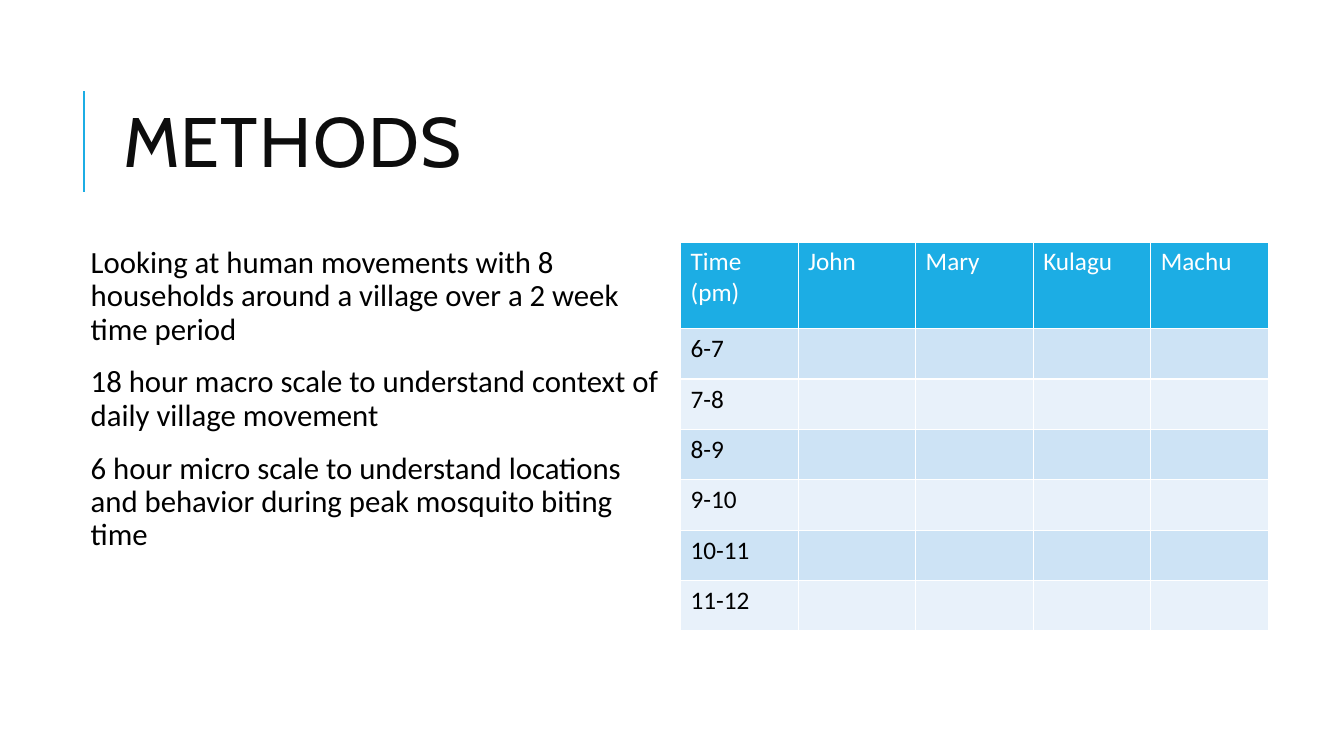
import pptx
import pptx.dml.color
import pptx.enum.shapes
import pptx.enum.text
import pptx.oxml.ns
import pptx.util
from lxml import etree

Inches = pptx.util.Inches
Pt = pptx.util.Pt
RGBColor = pptx.dml.color.RGBColor
qn = pptx.oxml.ns.qn

ACCENT = RGBColor(0x1C, 0xAD, 0xE4)
TITLE_INK = RGBColor(0x0D, 0x0D, 0x0D)
BLACK = RGBColor(0, 0, 0)
WHITE = RGBColor(0xFF, 0xFF, 0xFF)
BANDS = (RGBColor(0xCD, 0xE3, 0xF5), RGBColor(0xE8, 0xF1, 0xFA))

# Two equal columns below the title
COLUMN_WIDTH = 5.83
CONTENT_TOP = 2.4
LEFT_COLUMN = 0.75
RIGHT_COLUMN = 6.75

METHODS = (
    "Looking at human movements with 8 households around a village over a 2 week time period",
    "18 hour macro scale to understand context of daily village movement",
    "6 hour micro scale to understand locations and behavior during peak mosquito biting time",
)
PEOPLE = ("John", "Mary", "Kulagu", "Machu")
FIRST_HOUR, LAST_HOUR = 6, 12


def place(shape, box):
    shape.left, shape.top, shape.width, shape.height = (Inches(length) for length in box)


def add_run(paragraph, text, size, color, font="Calibri"):
    run = paragraph.add_run()
    run.text = text
    run.font.name = font
    run.font.size = Pt(size)
    run.font.color.rgb = color
    run.font.bold = False
    return run


def set_space_bullet(paragraph):
    """Hang the first line on a blank bullet in the accent colour."""
    properties = paragraph._p.get_or_add_pPr()
    properties.set("marL", str(Inches(0.1)))
    properties.set("indent", str(-Inches(0.1)))
    bullet_color = etree.SubElement(properties, qn("a:buClr"))
    etree.SubElement(bullet_color, qn("a:srgbClr"), val=str(ACCENT))
    etree.SubElement(properties, qn("a:buChar"), char=" ")


def build_title(slide, box):
    left, top, width, height = box
    title = slide.shapes.title
    place(title, box)
    frame = title.text_frame
    frame.auto_size = pptx.enum.text.MSO_AUTO_SIZE.NONE
    frame.vertical_anchor = pptx.enum.text.MSO_ANCHOR.MIDDLE
    paragraph = frame.paragraphs[0]
    paragraph.alignment = pptx.enum.text.PP_ALIGN.LEFT
    paragraph.line_spacing = 0.8
    run = add_run(paragraph, "METHODS", 50, TITLE_INK, "Cabin")
    run.font._element.set("spc", "100")

    rule_x = Inches(left - 0.29)
    rule = slide.shapes.add_connector(
        pptx.enum.shapes.MSO_CONNECTOR.STRAIGHT,
        rule_x, Inches(top + 1.26), rule_x, Inches(top + 0.26))
    rule.line.color.rgb = ACCENT
    rule.line.width = Pt(1.5)
    etree.SubElement(rule._element.spPr, qn("a:effectLst"))


def build_methods_list(slide, box):
    body = slide.placeholders[1]
    place(body, box)
    frame = body.text_frame
    frame.auto_size = pptx.enum.text.MSO_AUTO_SIZE.NONE
    frame.vertical_anchor = pptx.enum.text.MSO_ANCHOR.TOP
    frame.margin_left = frame.margin_right = Inches(0.05)
    frame.margin_top = frame.margin_bottom = Inches(0.05)
    for index, method in enumerate(METHODS):
        paragraph = frame.add_paragraph() if index else frame.paragraphs[0]
        paragraph.line_spacing = 0.9
        paragraph.space_before = Pt(12)
        paragraph.space_after = Pt(2)
        set_space_bullet(paragraph)
        add_run(paragraph, method, 22, BLACK)


def build_timetable(slide, box, header_height=0.86):
    hours = [f"{hour}-{hour + 1}" for hour in range(FIRST_HOUR, LAST_HOUR)]
    rows = [("Time (pm)", *PEOPLE)] + [(hour,) + ("",) * len(PEOPLE) for hour in hours]
    left, top, width, height = (Inches(length) for length in box)
    table = slide.shapes.add_table(len(rows), len(rows[0]), left, top, width, height).table
    row_height = (box[3] - header_height) / len(hours)
    for row_index, texts in enumerate(rows):
        is_header = row_index == 0
        table.rows[row_index].height = Inches(header_height if is_header else row_height)
        for column_index, text in enumerate(texts):
            cell = table.cell(row_index, column_index)
            cell.fill.solid()
            cell.fill.fore_color.rgb = ACCENT if is_header else BANDS[(row_index - 1) % 2]
            if text:
                add_run(cell.text_frame.paragraphs[0], text, 18, WHITE if is_header else BLACK)


def main():
    presentation = pptx.Presentation()
    presentation.slide_width = Inches(13.33)
    presentation.slide_height = Inches(7.5)
    slide = presentation.slides.add_slide(presentation.slide_layouts[1])
    slide.background.fill.solid()
    slide.background.fill.fore_color.rgb = WHITE
    build_title(slide, (1.12, 0.64, 10.63, 1.64))
    build_methods_list(slide, (LEFT_COLUMN, CONTENT_TOP, COLUMN_WIDTH, 4.4))
    build_timetable(slide, (RIGHT_COLUMN, CONTENT_TOP, COLUMN_WIDTH, 3.86))
    presentation.save("out.pptx")


if __name__ == "__main__":
    main()
